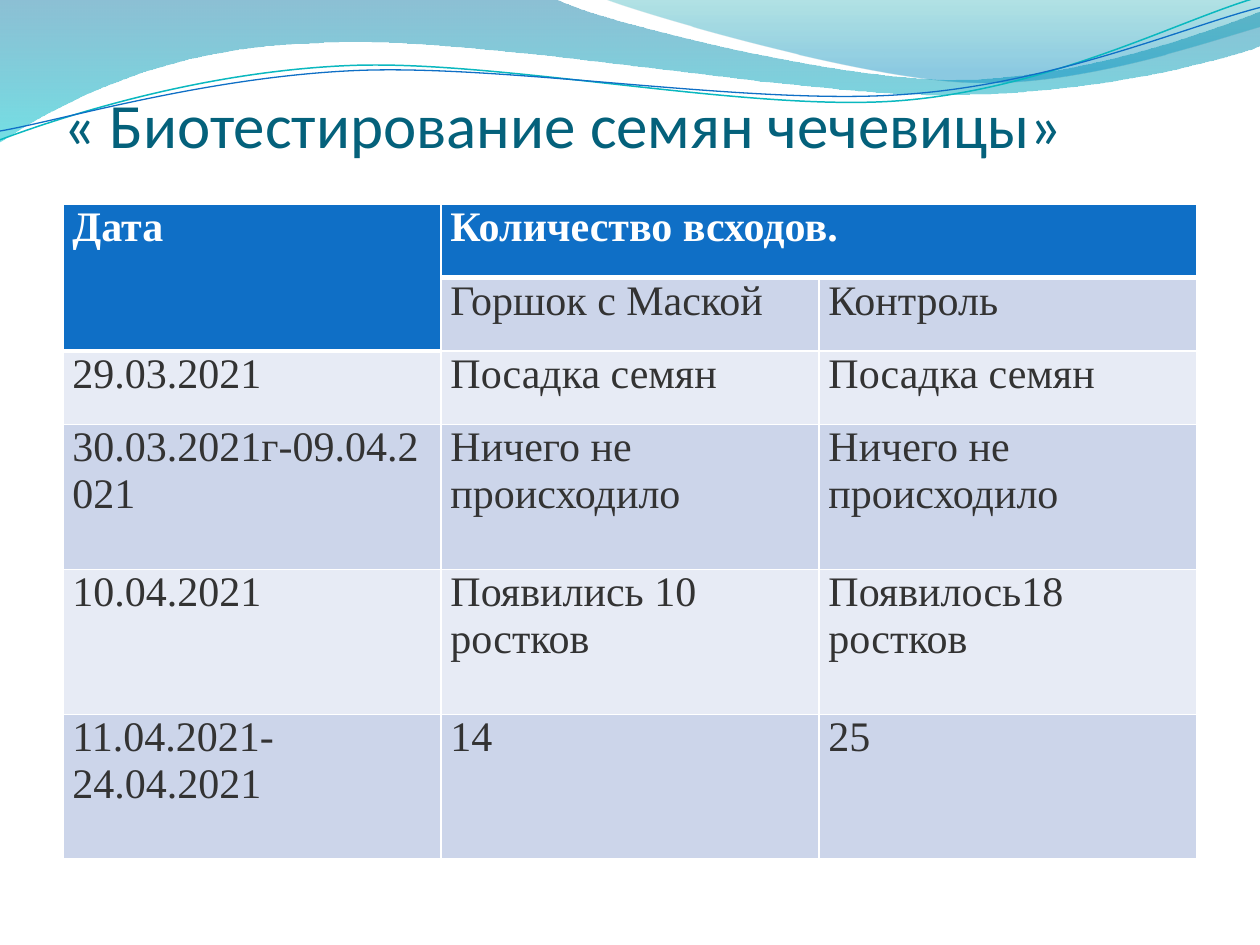
import math

from lxml import etree
from pptx import Presentation
from pptx.dml.color import RGBColor
from pptx.enum import text
from pptx.oxml import ns
from pptx.util import Inches, Pt

# Content
TITLE = "« Биотестирование семян чечевицы»"
ROWS = [
    ("Дата", "Количество всходов.", ""),
    ("", "Горшок с Маской", "Контроль"),
    ("29.03.2021", "Посадка семян", "Посадка семян"),
    ("30.03.2021г-09.04.2021", "Ничего не происходило", "Ничего не происходило"),
    ("10.04.2021", "Появились 10 ростков", "Появилось18 ростков"),
    ("11.04.2021-24.04.2021", "14", "25"),
]
ROW_HEIGHTS = [Pt(42)] * 3 + [Inches(1.15)] * 3
MERGES = [((0, 0), (1, 0)), ((0, 1), (0, 2))]
HEADER_CELLS = {(0, 0), (1, 0), (0, 1), (0, 2)}

THEME = {
    "title": {"name": "Calibri", "size": Pt(36), "color": "04617B", "bold": False},
    "header": {"name": "Times New Roman", "size": Pt(24), "color": "FFFFFF", "bold": True},
    "body": {"name": "Times New Roman", "size": Pt(24), "color": "333333", "bold": False},
    "header_fill": "0F6FC6",
    "bands": ("E7EBF5", "CCD5EA"),
    "border": "FFFFFF",
}

# Wave outlines: a pair is a straight step, six numbers are a Bezier curve
WAVES = [
    {"points": [(0, 0), (4.4, -0.01), (4.76, 0.17, 6.64, 0.63, 7.58, 0.63),
                (8.53, 0.63, 9.58, 0.26, 10, 0.09), (10.01, 0.36),
                (9.83, 0.44, 8.7, 0.76, 7.46, 0.75),
                (6.22, 0.75, 3.82, 0.28, 2.57, 0.34),
                (1.29, 0.36, 0.46, 0.83, -0.01, 1.13), (0, 0)],
     "gradient": [(0, "0074A1", 45), (1, "00C6CF", 55)]},
    {"points": [(4.79, -0.01), (5.09, 0.11, 6.82, 0.62, 7.69, 0.65),
                (8.56, 0.69, 9.61, 0.32, 10, 0.21), (10, 0), (4.79, -0.01)],
     "gradient": [(0, "00A1A9", 30), (0.8, "008BBF", 45)]},
    {"points": [(0, 1.11), (0.48, 0.93, 1.58, 0.57, 2.77, 0.52),
                (3.95, 0.47, 5.93, 0.89, 7.13, 0.8),
                (8.33, 0.71, 9.38, 0.15, 9.98, -0.02)],
     "line": ("0AB8BF", 0.85), "tilt": -2.7, "center": (4.99, 0.57)},
    {"points": [(0, 1.04), (0.47, 0.96, 1.64, 0.61, 2.83, 0.56),
                (4.03, 0.51, 5.97, 0.84, 7.17, 0.75),
                (8.36, 0.67, 9.41, 0.21, 10, 0.06)],
     "line": ("0F6FC6", 0.75), "tilt": -2.7, "center": (5, 0.59)},
]


def rgb(value):
    return RGBColor.from_string(value)


def set_attributes(target, values):
    for name, value in values.items():
        setattr(target, name, value)


def format_font(font, style):
    set_attributes(font, {k: v for k, v in style.items() if k != "color"})
    font.color.rgb = rgb(style["color"])


def turn(point, center, degrees):
    angle = math.radians(degrees)
    dx, dy = point[0] - center[0], point[1] - center[1]
    return (center[0] + dx * math.cos(angle) - dy * math.sin(angle),
            center[1] + dx * math.sin(angle) + dy * math.cos(angle))


def add_outline(slide, wave):
    """Lay all points as straight steps, then join each curve's three into one."""
    tilt, center = wave.get("tilt", 0), wave.get("center", (0, 0))
    steps = wave["points"]
    points = [turn(step[i:i + 2], center, -tilt)
              for step in steps for i in range(0, len(step), 2)]
    start, *rest = [(Inches(x), Inches(y)) for x, y in points]
    builder = slide.shapes.build_freeform(*start)
    builder.add_line_segments(rest, close="gradient" in wave)
    shape = builder.convert_to_shape()
    shape.rotation = tilt
    lines = iter(list(shape._element.iter(ns.qn("a:lnTo"))))
    for step in steps[1:]:
        segment = [next(lines) for _ in range(len(step) // 2)]
        if len(segment) == 3:
            curve = etree.Element(ns.qn("a:cubicBezTo"))
            segment[0].addprevious(curve)
            for line in segment:
                curve.append(line[0])
                line.getparent().remove(line)
    return shape


def add_wave(slide, wave):
    shape = add_outline(slide, wave)
    shape.shadow.inherit = False
    if "line" in wave:
        color, width = wave["line"]
        shape.fill.background()
        shape.line.color.rgb = rgb(color)
        shape.line.width = Pt(width)
        return
    shape.line.fill.background()
    shape.fill.gradient()
    shape.fill.gradient_angle = 270
    for stop, (position, color, _) in zip(shape.fill.gradient_stops, wave["gradient"]):
        stop.position = position
        stop.color.rgb = rgb(color)
    colors = shape._element.spPr.iter(ns.qn("a:srgbClr"))
    for element, (_, _, opacity) in zip(colors, wave["gradient"]):
        etree.SubElement(element, ns.qn("a:alpha"), val=str(opacity * 1000))


def add_borders(cell, widths):
    properties = cell._tc.get_or_add_tcPr()
    for index, (side, width) in enumerate(widths.items()):
        line = etree.Element(ns.qn("a:ln" + side), w=str(Pt(width)))
        fill = etree.SubElement(line, ns.qn("a:solidFill"))
        etree.SubElement(fill, ns.qn("a:srgbClr"), val=THEME["border"])
        properties.insert(index, line)


def format_cell(cell, row, column, content):
    is_header = (row, column) in HEADER_CELLS
    below_header = not is_header and (row - 1, column) in HEADER_CELLS
    ends_header = is_header and (row + 1, column) not in HEADER_CELLS
    set_attributes(cell, {"margin_left": Pt(5.4), "margin_right": Pt(5.4),
                          "margin_top": 0, "margin_bottom": 0})
    cell.fill.solid()
    cell.fill.fore_color.rgb = rgb(THEME["header_fill"] if is_header
                                   else THEME["bands"][row % 2])
    add_borders(cell, {"L": 1, "R": 1, "T": 3 if below_header else 1,
                       "B": 3 if ends_header else 1})
    if content:
        paragraph = cell.text_frame.paragraphs[0]
        set_attributes(paragraph, {"space_before": Pt(18), "space_after": Pt(18)})
        run = paragraph.add_run()
        run.text = content
        format_font(run.font, THEME["header" if is_header else "body"])


def add_results_table(slide):
    frame = slide.shapes.add_table(len(ROWS), len(ROWS[0]), Inches(0.5), Inches(1.62),
                                   Inches(9), sum(ROW_HEIGHTS))
    table = frame.table
    for row, height in enumerate(ROW_HEIGHTS):
        table.rows[row].height = height
        for column, content in enumerate(ROWS[row]):
            format_cell(table.cell(row, column), row, column, content)
    for first, last in MERGES:
        table.cell(*first).merge(table.cell(*last))


def format_title(slide):
    title = slide.shapes.title
    set_attributes(title, {"left": Inches(0.5), "top": Inches(0.68),
                           "width": Inches(9), "height": Inches(1.25)})
    set_attributes(title.text_frame, {
        "text": TITLE, "word_wrap": True, "auto_size": text.MSO_AUTO_SIZE.NONE,
        "vertical_anchor": text.MSO_ANCHOR.TOP, "margin_left": 0, "margin_right": 0,
        "margin_top": 0, "margin_bottom": 0})
    paragraph = title.text_frame.paragraphs[0]
    paragraph.alignment = text.PP_ALIGN.LEFT
    format_font(paragraph.runs[0].font, THEME["title"])
    # Bring the title in front of the waves
    slide.shapes._spTree.append(title._element)


def main():
    presentation = Presentation()
    set_attributes(presentation, {"slide_width": Inches(10), "slide_height": Inches(7.5)})
    slide = presentation.slides.add_slide(presentation.slide_layouts[5])
    for wave in WAVES:
        add_wave(slide, wave)
    format_title(slide)
    add_results_table(slide)
    presentation.save("out.pptx")


if __name__ == "__main__":
    main()
